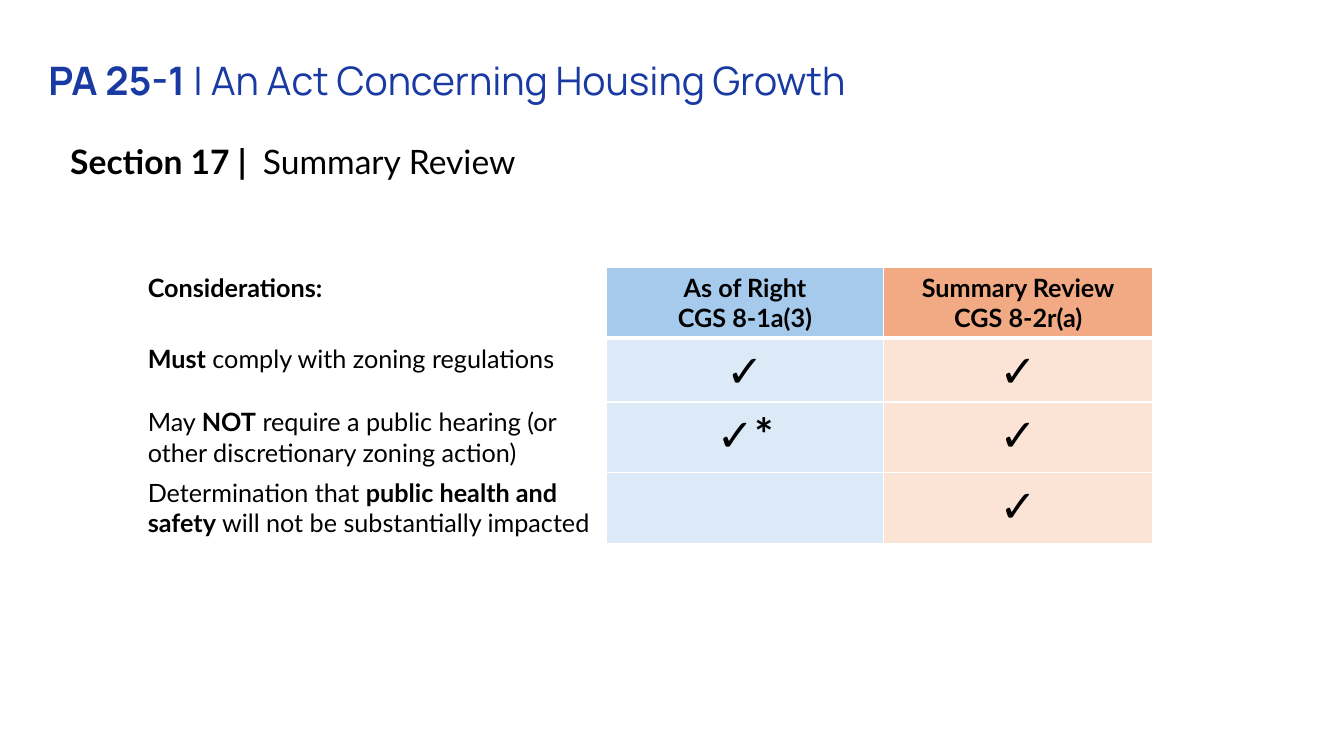
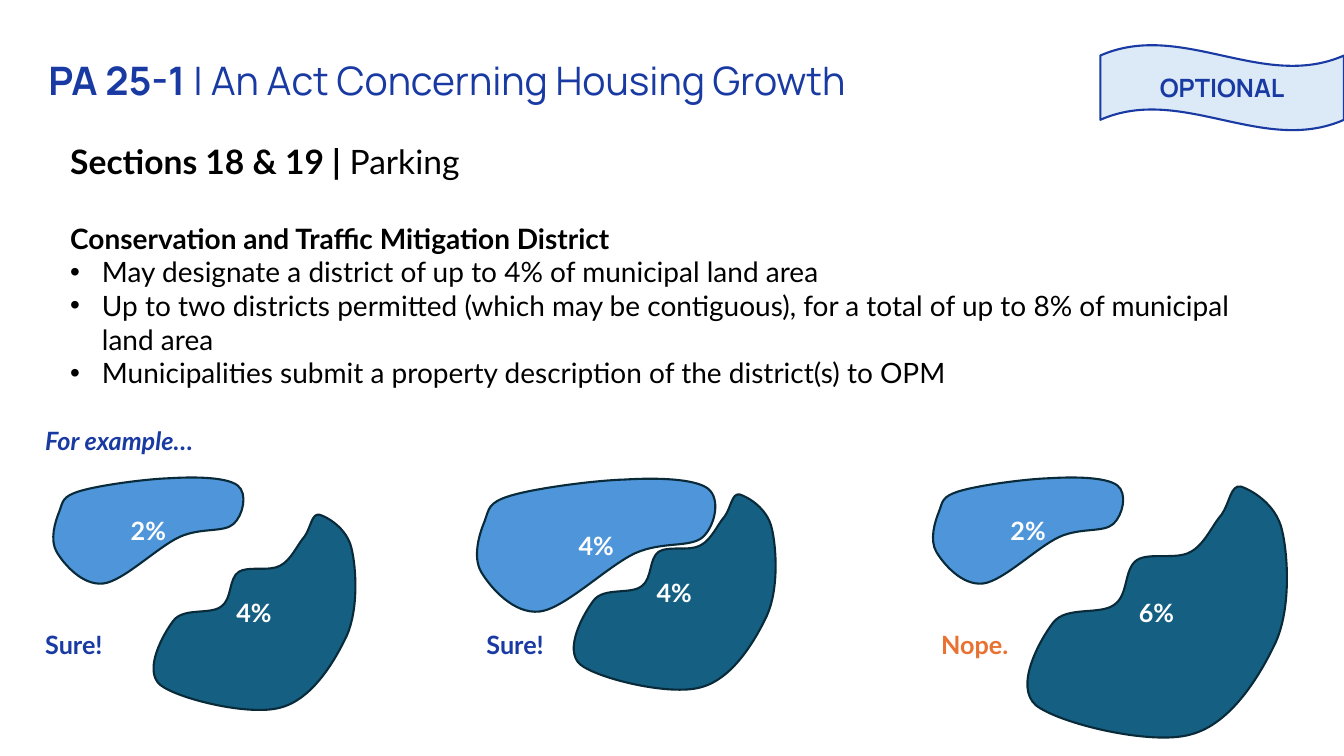
from dataclasses import dataclass

from lxml.etree import SubElement
from pptx import Presentation
from pptx.dml.color import RGBColor
from pptx.enum.shapes import MSO_SHAPE
from pptx.enum.text import MSO_ANCHOR, PP_ALIGN
from pptx.oxml import parse_xml
from pptx.oxml.ns import nsdecls, qn
from pptx.util import Cm, Pt


@dataclass(frozen=True)
class Theme:
    navy: str = "193AA3"
    black: str = "000000"
    white: str = "FFFFFF"
    edge: str = "092A39"
    sky: str = "4E95D9"
    teal: str = "156082"
    orange: str = "E97132"
    ice: str = "DCEAF7"
    blue: str = "A6CAEC"
    peach: str = "FBE3D6"
    coral: str = "F2AA84"
    display: str = "Manrope"
    sans: str = "Lato"
    title: int = 28
    head: int = 24
    body: int = 20
    label: int = 18
    check: int = 32
    line: float = 1.5


T = Theme()
TITLE = "~PA 25-1 ~| An Act Concerning Housing Growth"

PALE = ((236, 132), (33, 17), [
    (10, 24, 12, 30, 7, 43), (2, 55, -5, 78, 4, 93),
    (13, 108, 36, 135, 62, 132), (87, 129, 129, 87, 157, 74),
    (184, 62, 212, 69, 224, 58), (236, 47, 242, 20, 229, 10),
    (216, 0, 178, -1, 146, 1), (114, 2, 56, 10, 33, 17)])
DARK = ((257, 249), (193, 28), [
    (184, 38, 176, 58, 162, 65), (148, 73, 121, 65, 109, 73),
    (96, 82, 101, 107, 87, 117), (73, 128, 39, 118, 26, 135),
    (13, 152, -13, 198, 9, 217), (32, 235, 123, 257, 162, 246),
    (202, 236, 231, 188, 247, 154), (262, 120, 259, 68, 253, 43),
    (247, 17, 222, 3, 212, 0), (202, -2, 201, 17, 193, 28)])

ROWS = [
    ("~Considerations:", ["~As of Right", "~CGS 8-1a(3)"],
     ["~Summary Review", "~CGS 8-2r(a)"]),
    ("~Must~ comply with zoning regulations", "~✓", "~✓"),
    ("May ~NOT~ require a public hearing (or other discretionary zoning action)",
     "~✓*", "~✓"),
    ("Determination that ~public health and safety~ will not be substantially impacted",
     "", "~✓"),
]

POINTS = [
    "May designate a district of up to 4% of municipal land area",
    "Up to two districts permitted (which may be contiguous), for a total of up to 8% of municipal land area",
    "Municipalities submit a property description of the district(s) to OPM",
]

CASES = [
    (0.89, (0.46, 0, 4.78, "2%"), (2.97, 0.94, 5.08, "4%"), "Sure!", T.navy),
    (12.01, (0.02, 0.03, 5.99, "4%"), (2.44, 0.43, 5.08, "4%"), "Sure!", T.navy),
    (23.47, (0.05, 0, 4.78, "2%"), (2.41, 0.23, 6.53, "6%"), "Nope.", T.orange),
]


def rgb(code):
    return RGBColor.from_string(code)


def bullet(para):
    props = para._p.get_or_add_pPr()
    props.set("marL", str(Cm(0.8)))
    props.set("indent", str(-Cm(0.8)))
    SubElement(props, qn("a:buFont")).set("typeface", "Arial")
    SubElement(props, qn("a:buChar")).set("char", "•")


def write(frame, lines, size=T.label, color=T.black, font=T.sans,
          align=PP_ALIGN.LEFT, anchor=MSO_ANCHOR.TOP, italic=False,
          space=None, gap=None, dots=False):
    frame.word_wrap = True
    frame.vertical_anchor = anchor
    fresh = not frame.text
    for line in [lines] if isinstance(lines, str) else lines:
        para = frame.paragraphs[0] if fresh else frame.add_paragraph()
        fresh = False
        if dots:
            bullet(para)
        para.alignment = align
        para.line_spacing = space
        para.space_before = gap
        para.font.size = Pt(size)
        for part, words in enumerate(line.split("~")):
            if words:
                run = para.add_run()
                run.text = words
                style = run.font
                style.name, style.size = font, Pt(size)
                style.bold, style.italic = part % 2 == 1, italic
                style.color.rgb = rgb(color)


def label(slide, box, lines, **form):
    frame = slide.shapes.add_textbox(*map(Cm, box)).text_frame
    write(frame, lines, **form)
    return frame


def paint(shape, fill, line):
    shape.shadow.inherit = False
    shape.fill.solid()
    shape.fill.fore_color.rgb = rgb(fill)
    shape.line.color.rgb = rgb(line)
    shape.line.width = Pt(T.line)


def start(deck, head, width, height):
    slide = deck.slides.add_slide(deck.slide_layouts[6])
    label(slide, (0.97, 1, 30.58, 2.16), TITLE, size=T.title,
          color=T.navy, font=T.display, anchor=MSO_ANCHOR.MIDDLE, space=0.9)
    frame = label(slide, (1.52, 3.42, width, height), head, size=T.head)
    return slide, frame


def border(cell, row):
    props = cell._tc.get_or_add_tcPr()
    thick = {"T": row == 1, "B": row == 0}
    for spot, side in enumerate("LRTB"):
        width = Pt(3 if thick.get(side) else 1)
        props.insert(spot, parse_xml(
            f'<a:ln{side} {nsdecls("a")} w="{width}"><a:solidFill>'
            f'<a:srgbClr val="{T.white}"/></a:solidFill></a:ln{side}>'))


def grid(slide, left, top):
    wide, tall = (11.81, 6.99, 6.78), (1.78, 1.61, 1.78, 1.78)
    fills = (T.white, T.ice, T.peach)
    heads = (T.white, T.blue, T.coral)
    table = slide.shapes.add_table(
        len(tall), len(wide), Cm(left), Cm(top), Cm(sum(wide)), Cm(sum(tall))).table
    for col, width in zip(table.columns, wide):
        col.width = Cm(width)
    for row, height in enumerate(tall):
        table.rows[row].height = Cm(height)
        for col, words in enumerate(ROWS[row]):
            cell = table.cell(row, col)
            cell.fill.solid()
            cell.fill.fore_color.rgb = rgb((fills if row else heads)[col])
            border(cell, row)
            write(cell.text_frame, words,
                  size=T.check if row and col else T.label,
                  align=PP_ALIGN.CENTER if col else PP_ALIGN.LEFT)


def bend(track, kind, nums):
    step = SubElement(track, qn("a:" + kind))
    for x, y in zip(nums[::2], nums[1::2]):
        point = SubElement(step, qn("a:pt"))
        point.set("x", str(x))
        point.set("y", str(y))


def blob(slide, outline, left, top, width, words, fill):
    (wide, tall), first, bends = outline
    pen = slide.shapes.build_freeform(0, 0, scale=Cm(width) / wide)
    pen.add_line_segments([(wide, 0), (wide, tall), (0, tall)])
    shape = pen.convert_to_shape(Cm(left), Cm(top))
    track = next(shape._element.iter(qn("a:path")))
    for step in list(track):
        track.remove(step)
    bend(track, "moveTo", first)
    for nums in bends:
        bend(track, "cubicBezTo", nums)
    SubElement(track, qn("a:close"))
    paint(shape, fill, T.edge)
    write(shape.text_frame, "~" + words, color=T.white,
          align=PP_ALIGN.CENTER, anchor=MSO_ANCHOR.MIDDLE)


def case(slide, left, top, pale, dark, verdict, color):
    for outline, spot, fill in ((PALE, pale, T.sky), (DARK, dark, T.teal)):
        x, y, width, words = spot
        blob(slide, outline, left + x, top + y, width, words, fill)
    label(slide, (left, top + 3.71, 2.26, 1.02), "~" + verdict, color=color)


def flag(slide, box):
    shape = slide.shapes.add_shape(MSO_SHAPE.WAVE, *map(Cm, box))
    paint(shape, T.ice, T.navy)
    write(shape.text_frame, "~OPTIONAL", color=T.navy, font=T.display,
          align=PP_ALIGN.CENTER, anchor=MSO_ANCHOR.MIDDLE)


def review(deck):
    slide, _ = start(deck, "~Section 17 |  ~Summary Review", 23.67, 2.06)
    grid(slide, 3.47, 6.74)


def parking(deck):
    slide, frame = start(deck, "~Sections 18 & 19 |~ Parking", 30.02, 7.34)
    write(frame, "~Conservation and Traffic Mitigation District",
          size=T.body, gap=Pt(28.8))
    write(frame, POINTS, size=T.body, dots=True)
    flag(slide, (27.73, 1.13, 6.14, 2.16))
    for left, *parts in CASES:
        case(slide, left, 12.03, *parts)
    label(slide, (0.89, 10.6, 4.67, 1.02), "~For example…",
          color=T.navy, italic=True)


def main():
    deck = Presentation()
    deck.slide_width, deck.slide_height = Cm(33.87), Cm(19.05)
    review(deck)
    parking(deck)
    deck.save("out.pptx")


if __name__ == "__main__":
    main()
